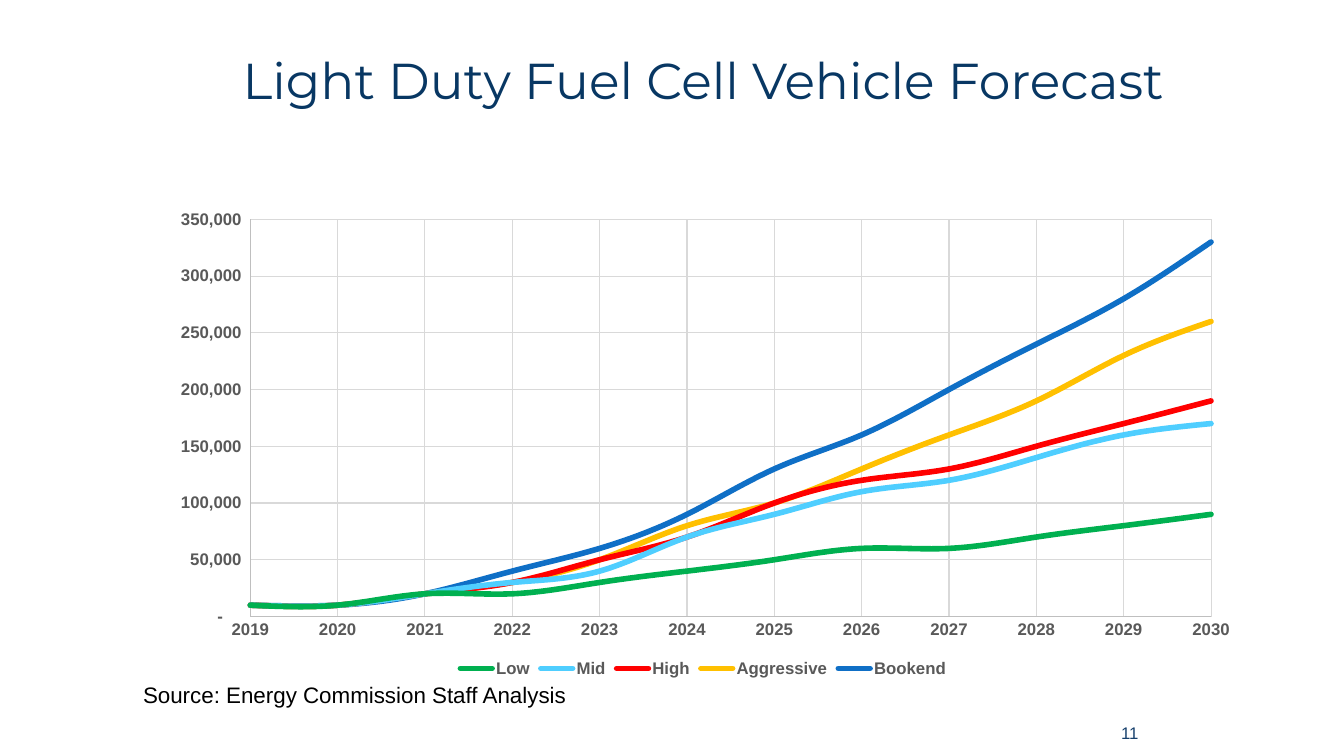
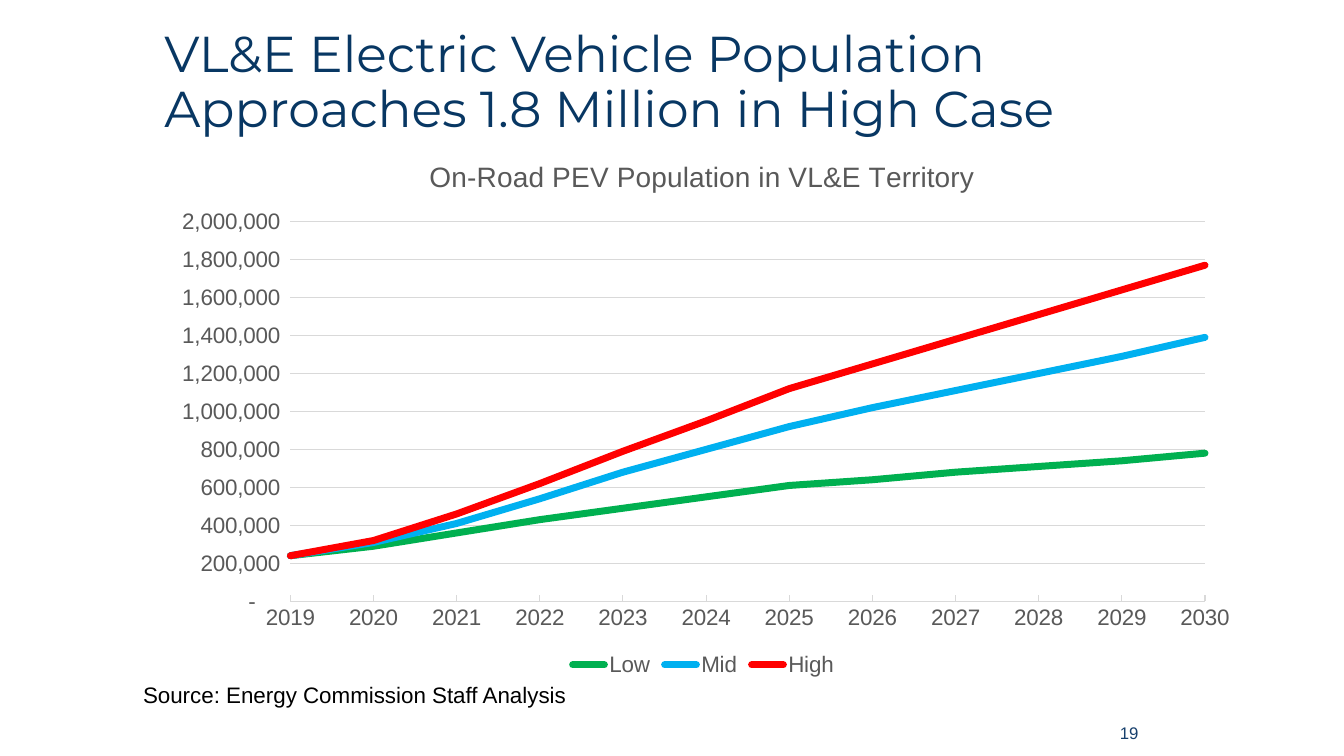
from lxml import etree
from pptx import Presentation
from pptx.chart.data import CategoryChartData, XyChartData
from pptx.dml.color import RGBColor
from pptx.enum.chart import XL_CHART_TYPE, XL_LEGEND_POSITION, XL_TICK_MARK
from pptx.enum.text import MSO_ANCHOR, MSO_AUTO_SIZE, PP_ALIGN
from pptx.oxml.ns import qn
from pptx.util import Inches, Pt

LINE, CURVE = XL_CHART_TYPE.LINE, XL_CHART_TYPE.XY_SCATTER_SMOOTH_NO_MARKERS
BOTTOM = XL_LEGEND_POSITION.BOTTOM
NONE, INSIDE = XL_TICK_MARK.NONE, XL_TICK_MARK.INSIDE
LEFT, CENTER, RIGHT = PP_ALIGN.LEFT, PP_ALIGN.CENTER, PP_ALIGN.RIGHT
TOP, MIDDLE = MSO_ANCHOR.TOP, MSO_ANCHOR.MIDDLE
FIXED = MSO_AUTO_SIZE.NONE

COLORS = {
    "title": "083763", "number": "17406D", "text": "000000",
    "label": "595959", "axis": "BFBFBF", "grid": "D9D9D9",
    "green": "00B050", "sky": "4FCEFF", "cyan": "00B0F0",
    "red": "FF0000", "gold": "FFC000", "blue": "0F6FC6",
}
HEAD, BODY = "Montserrat", "Arial"
SOURCE = "Source: Energy Commission Staff Analysis"
FORMAT = '_(* #,##0_);_(* \\(#,##0\\);_(* "-"??_);_(@_)'
YEARS = list(range(2019, 2031))
EDGE, WIDTH, BASE = 1.53, 10.89, 6.76

SLIDES = [
    {
        "title": "Light Duty Fuel Cell Vehicle Forecast",
        "align": CENTER, "number": "11", "kind": CURVE, "top": 2,
        "plot": (8.75, 3.7, 87.5, 82.8), "caption": None,
        "size": 12, "bold": True, "width": 4, "axis": "axis",
        "tick": NONE, "max": 350, "step": 50,
        "series": [
            ("Low", "green", [10, 10, 20, 20, 30, 40, 50, 60, 60, 70, 80, 90]),
            ("Mid", "sky", [10, 10, 20, 30, 40, 70, 90, 110, 120, 140, 160, 170]),
            ("High", "red", [10, 10, 20, 30, 50, 70, 100, 120, 130, 150, 170, 190]),
            ("Aggressive", "gold", [10, 10, 20, 30, 50, 80, 100, 130, 160, 190, 230, 260]),
            ("Bookend", "blue", [10, 10, 20, 40, 60, 90, 130, 160, 200, 240, 280, 330]),
        ],
    },
    {
        "title": "VL&E Electric Vehicle Population Approaches 1.8 Million in High Case",
        "align": LEFT, "number": "19", "kind": LINE, "top": 1.4,
        "plot": (12.4, 14.9, 83.3, 70.3),
        "caption": "On-Road PEV Population in VL&E Territory",
        "size": 16, "bold": False, "width": 5, "axis": "grid",
        "tick": INSIDE, "max": 2000, "step": 200,
        "series": [
            ("Low", "green", [240, 290, 360, 430, 490, 550, 610, 640, 680, 710, 740, 780]),
            ("Mid", "cyan", [240, 310, 410, 540, 680, 800, 920, 1020, 1110, 1200, 1290, 1390]),
            ("High", "red", [240, 320, 460, 620, 790, 950, 1120, 1250, 1380, 1510, 1640, 1770]),
        ],
    },
]


def color(name):
    return RGBColor.from_string(COLORS[name])


def style(font, face, size, tint, bold=False):
    font.name, font.size, font.bold = face, Pt(size), bold
    font.color.rgb = color(tint)


def stroke(line, tint, width=0.75):
    line.color.rgb = color(tint)
    line.width = Pt(width)


def write(shape, text, box, face, size, tint, align=LEFT, anchor=TOP):
    shape.left, shape.top, shape.width, shape.height = map(Inches, box)
    frame = shape.text_frame
    frame.text = text
    frame.word_wrap, frame.auto_size = True, FIXED
    frame.vertical_anchor = anchor
    para = frame.paragraphs[0]
    para.alignment = align
    style(para.runs[0].font, face, size, tint)
    return para


def label(slide, text, box, *look):
    shape = slide.shapes.add_textbox(*map(Inches, box))
    write(shape, text, box, BODY, *look)


def place(node, spots):
    lay = node.find(qn("c:layout"))
    if lay is None:
        lay = etree.Element(qn("c:layout"))
        node.insert(0, lay)
    manual = etree.SubElement(lay, qn("c:manualLayout"))
    for tag, value in spots:
        etree.SubElement(manual, qn("c:" + tag)).set("val", str(value))


def share(values):
    return [(tag, value / 100) for tag, value in zip("xywh", values)]


def fill(item):
    if item["kind"] == CURVE:
        data = XyChartData(number_format=FORMAT)
        for name, _, vals in item["series"]:
            row = data.add_series(name)
            for year, val in zip(YEARS, vals):
                row.add_data_point(year, val * 1000)
        return data
    data = CategoryChartData(number_format=FORMAT)
    data.categories = [str(year) for year in YEARS]
    for name, _, vals in item["series"]:
        data.add_series(name, [val * 1000 for val in vals])
    return data


def cross(chart):
    axis = chart.element.xpath("//c:valAx")[0]
    node = axis.find(qn("c:crossBetween"))
    if node is None:
        node = etree.Element(qn("c:crossBetween"))
        axis.find(qn("c:crosses")).addnext(node)
    node.set("val", "midCat")


def curve(chart):
    for row in chart.element.xpath("//c:ser"):
        node = row.find(qn("c:smooth"))
        if node is None:
            node = etree.Element(qn("c:smooth"))
            row.find(qn("c:yVal")).addnext(node)
        node.set("val", "1")


def set_axes(chart, item):
    across, up = chart.category_axis, chart.value_axis
    for axis in (across, up):
        style(axis.tick_labels.font, BODY, item["size"], "label", item["bold"])
        axis.major_tick_mark = axis.minor_tick_mark = NONE
        stroke(axis.format.line, item["axis"])
    across.major_tick_mark = item["tick"]
    up.minimum_scale, up.maximum_scale = 0, item["max"] * 1000
    up.major_unit = item["step"] * 1000
    up.tick_labels.number_format = FORMAT
    up.tick_labels.number_format_is_linked = False
    stroke(up.major_gridlines.format.line, "grid")
    if item["kind"] == CURVE:
        across.minimum_scale, across.maximum_scale = YEARS[0], YEARS[-1]
        across.major_unit = 1
        across.tick_labels.number_format = "General"
        across.tick_labels.number_format_is_linked = False
        stroke(across.major_gridlines.format.line, "grid")
    else:
        up.format.line.fill.background()
        cross(chart)


def draw(slide, item):
    top = item["top"]
    box = map(Inches, (EDGE, top, WIDTH, BASE - top))
    chart = slide.shapes.add_chart(item["kind"], *box, fill(item)).chart
    style(chart.font, BODY, 10, "text")
    set_axes(chart, item)
    chart.has_legend = True
    chart.legend.position = BOTTOM
    chart.legend.include_in_layout = False
    style(chart.legend.font, BODY, item["size"], "label", item["bold"])

    plot = chart.plots[0]
    plot.vary_by_categories = False
    for row, (_, tint, _) in zip(plot.series, item["series"]):
        stroke(row.format.line, tint, item["width"])
        if item["kind"] == LINE:
            row.smooth = False
    if item["kind"] == CURVE:
        curve(chart)
    for node in chart.element.xpath("//c:ser/c:spPr/a:ln"):
        node.set("cap", "rnd")

    chart.has_title = bool(item["caption"])
    edges = [("xMode", "edge"), ("yMode", "edge")]
    if item["caption"]:
        frame = chart.chart_title.text_frame
        frame.text = item["caption"]
        style(frame.paragraphs[0].runs[0].font, BODY, 20, "label")
        place(chart.element.xpath("//c:title")[0], edges + share((24.6, 2.4)))
    inner = [("layoutTarget", "inner")]
    place(chart.element.xpath("//c:plotArea")[0], inner + edges + share(item["plot"]))


def main():
    deck = Presentation()
    deck.slide_width, deck.slide_height = Inches(13.33), Inches(7.5)
    for item in SLIDES:
        slide = deck.slides.add_slide(deck.slide_layouts[5])
        para = write(slide.shapes.title, item["title"], (EDGE, 0.26, WIDTH, 1.14),
                     HEAD, 36, "title", item["align"], MIDDLE)
        para.line_spacing = 0.9
        label(slide, item["number"], (9.42, 7.07, 1.97, 0.4), 12, "number", RIGHT, MIDDLE)
        draw(slide, item)
        label(slide, SOURCE, (1.32, 6.71, 4.42, 0.37), 16, "text")
    deck.save("out.pptx")


if __name__ == "__main__":
    main()
